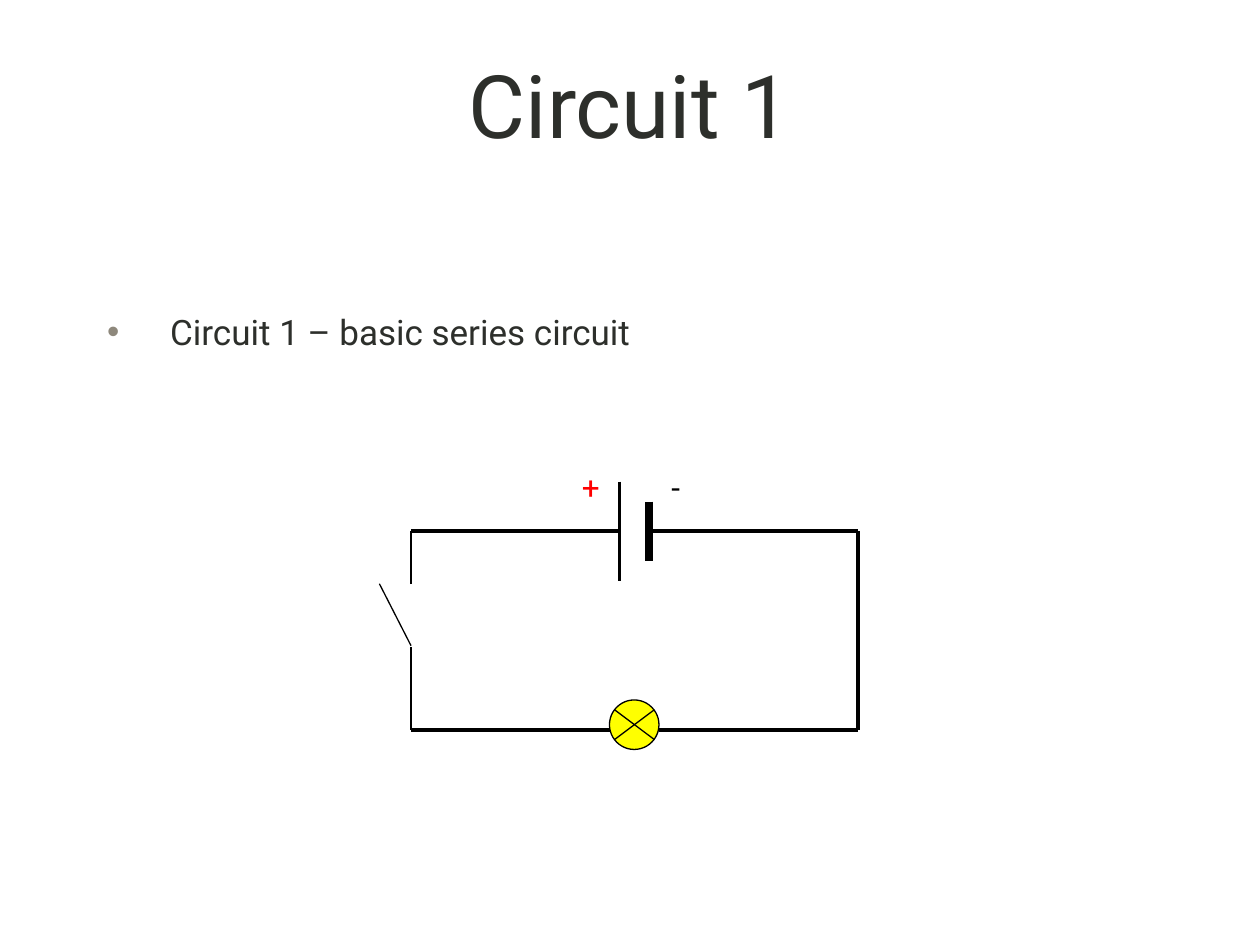
from dataclasses import dataclass

from lxml import etree
from pptx import Presentation
from pptx import util as u
from pptx.dml.color import RGBColor
from pptx.enum import shapes, text
from pptx.oxml import ns
from pptx.shapes.group import GroupShape
from pptx.slide import Slide
from pptx.text.text import _Paragraph as Paragraph

Pt = u.Pt
FONT = "Roboto"
INK = RGBColor(0x2D, 0x2F, 0x2B)
BLACK = RGBColor(0, 0, 0)
RED = RGBColor(0xFF, 0, 0)
YELLOW = RGBColor(0xFF, 0xFF, 0)
BULLET = RGBColor(0x8E, 0x88, 0x7C)

THIN, THICK, HEAVY = 0.75, 2.25, 4.5
LEFT, RIGHT, TOP, BOTTOM = 234.9, 490.2, 303.7, 417
PLATE_PLUS, PLATE_MINUS = 354, 370.9
LAMP_LEFT, LAMP_TOP, LAMP_SIZE = 348.3, 400, 28.3
CROSS_LEFT, CROSS_RIGHT, CROSS_TOP, CROSS_BOTTOM = 351.2, 373.9, 405.6, 422.6


@dataclass(frozen=True)
class Wire:
    x1: float
    y1: float
    x2: float
    y2: float
    width: float = THICK


@dataclass(frozen=True)
class Sign:
    label: str
    left: float
    width: float
    color: RGBColor


CIRCUIT_WIRES = [
    Wire(PLATE_PLUS, TOP, LEFT, TOP),
    Wire(RIGHT, TOP, RIGHT, BOTTOM),
    Wire(PLATE_PLUS, 275.3, PLATE_PLUS, 332),
    Wire(PLATE_MINUS, 286.6, PLATE_MINUS, 320.6, HEAVY),
    Wire(RIGHT, TOP, PLATE_MINUS, TOP),
    Wire(LAMP_LEFT, BOTTOM, LEFT, BOTTOM),
    Wire(RIGHT, BOTTOM, LAMP_LEFT + LAMP_SIZE, BOTTOM),
]
LAMP_CROSS = [
    Wire(CROSS_LEFT, CROSS_TOP, CROSS_RIGHT, CROSS_BOTTOM, THIN),
    Wire(CROSS_LEFT, CROSS_BOTTOM, CROSS_RIGHT, CROSS_TOP, THIN),
]
SWITCH = [
    Wire(LEFT, BOTTOM, LEFT, 370, THIN),
    Wire(LEFT, 333.8, LEFT, TOP, THIN),
    Wire(LEFT, 369, 216.8, 333.6, THIN),
]
SIGNS = [Sign("+", 325.4, 25.9, RED), Sign("-", 376.6, 20.2, BLACK)]


def style(paragraph: Paragraph, size: float, color: RGBColor) -> None:
    paragraph.font.name = FONT
    paragraph.font.size = Pt(size)
    paragraph.font.color.rgb = color


def fill_placeholder(slide: Slide, index: int, wording: str, top: float,
                     height: float, size: float) -> Paragraph:
    shape = slide.placeholders[index]
    shape.left, shape.top = Pt(54), Pt(top)
    shape.width, shape.height = Pt(612), Pt(height)
    frame = shape.text_frame
    frame.text = wording
    frame.auto_size = text.MSO_AUTO_SIZE.NONE
    style(frame.paragraphs[0], size, INK)
    return frame.paragraphs[0]


def add_bullet(paragraph: Paragraph) -> None:
    properties = paragraph._p.get_or_add_pPr()
    properties.set("marL", str(Pt(36)))
    properties.set("indent", str(-Pt(36)))
    color = etree.Element(ns.qn("a:buClr"))
    etree.SubElement(color, ns.qn("a:srgbClr"), val=str(BULLET))
    character = etree.Element(ns.qn("a:buChar"), char="•")
    defaults = properties.find(ns.qn("a:defRPr"))
    defaults.addprevious(color)
    defaults.addprevious(character)


def draw_sign(slide: Slide, sign: Sign) -> None:
    box = slide.shapes.add_textbox(Pt(sign.left), Pt(264.2), Pt(sign.width), Pt(28.8))
    frame = box.text_frame
    frame.text = sign.label
    frame.word_wrap = False
    frame.auto_size = text.MSO_AUTO_SIZE.SHAPE_TO_FIT_TEXT
    style(frame.paragraphs[0], 18, sign.color)


def draw_wires(circuit: GroupShape, wires: list[Wire]) -> None:
    for wire in wires:
        connector = circuit.shapes.add_connector(
            shapes.MSO_CONNECTOR.STRAIGHT,
            Pt(wire.x1), Pt(wire.y1), Pt(wire.x2), Pt(wire.y2))
        connector.line.color.rgb = BLACK
        connector.line.width = Pt(wire.width)
        etree.SubElement(connector._element.spPr, ns.qn("a:effectLst"))


def draw_lamp(circuit: GroupShape) -> None:
    lamp = circuit.shapes.add_shape(
        shapes.MSO_SHAPE.OVAL, Pt(LAMP_LEFT), Pt(LAMP_TOP), Pt(LAMP_SIZE), Pt(LAMP_SIZE))
    lamp.shadow.inherit = False
    lamp.fill.solid()
    lamp.fill.fore_color.rgb = YELLOW
    lamp.line.color.rgb = BLACK
    lamp.line.width = Pt(THIN)
    draw_wires(circuit, LAMP_CROSS)


def main() -> None:
    presentation = Presentation()
    presentation.slide_width, presentation.slide_height = Pt(720), Pt(540)
    slide = presentation.slides.add_slide(presentation.slide_layouts[1])

    title = fill_placeholder(slide, 0, "Circuit 1", 5, 108, 50)
    title.alignment = text.PP_ALIGN.CENTER
    slide.shapes.title.text_frame.vertical_anchor = text.MSO_ANCHOR.MIDDLE

    item = fill_placeholder(slide, 1, "Circuit 1 – basic series circuit", 174, 54, 20)
    item.space_before = Pt(20)
    add_bullet(item)

    for sign in SIGNS:
        draw_sign(slide, sign)

    circuit = slide.shapes.add_group_shape()
    draw_wires(circuit, CIRCUIT_WIRES)
    draw_lamp(circuit)
    draw_wires(circuit, SWITCH)
    presentation.save("out.pptx")


if __name__ == "__main__":
    main()
